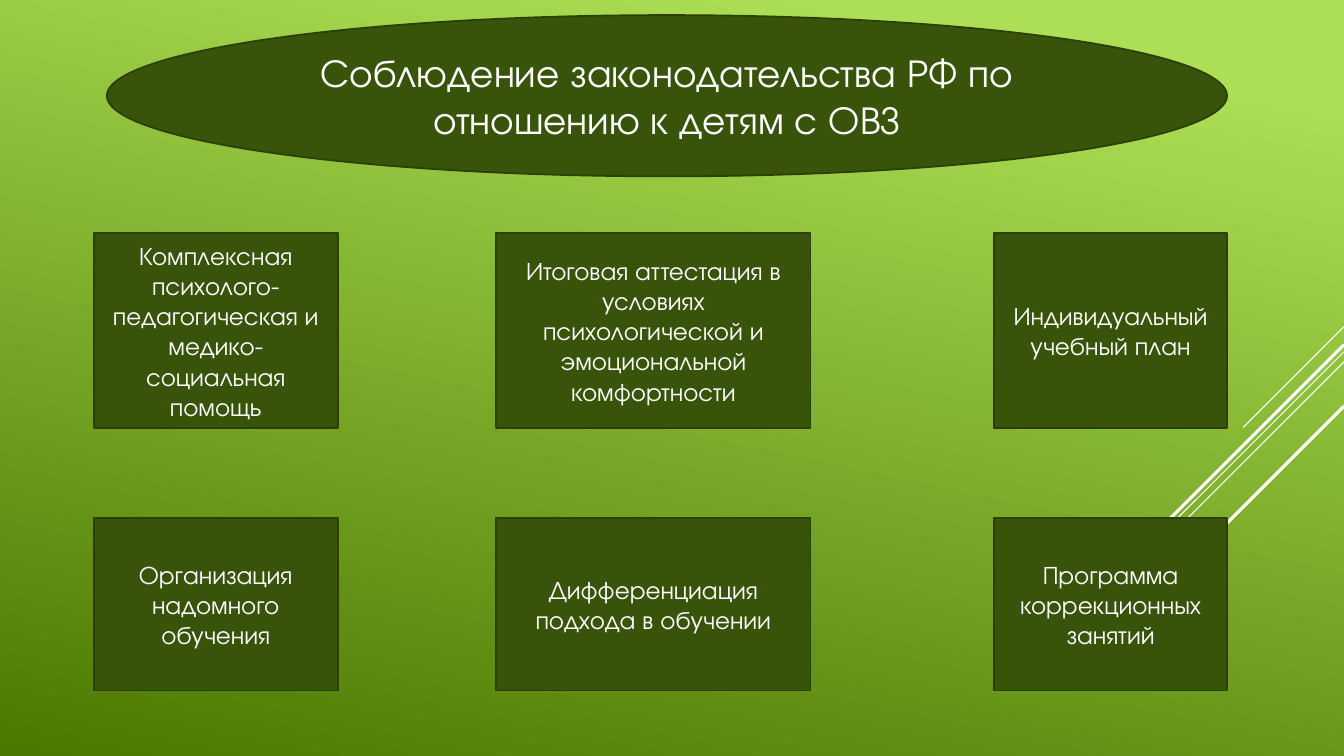
"""Build a slide on the rights of children with special needs under Russian law."""
from dataclasses import dataclass

import pptx
import pptx.dml.color
import pptx.enum.shapes
import pptx.enum.text
import pptx.oxml
import pptx.oxml.ns
import pptx.util

Inches = pptx.util.Inches
Pt = pptx.util.Pt
Shapes = pptx.enum.shapes.MSO_SHAPE

TITLE = "Соблюдение законодательства РФ по отношению к детям с ОВЗ"
MEASURES = [
    [
        "Комплексная психолого-педагогическая и медико-социальная помощь",
        "Итоговая аттестация в условиях психологической и эмоциональной комфортности",
        "Индивидуальный учебный план",
    ],
    [
        "Организация надомного обучения",
        "Дифференциация подхода в обучении",
        "Программа коррекционных занятий",
    ],
]
PAGE_WIDTH, PAGE_HEIGHT = 13.33, 7.5
TITLE_PLACE = (1.06, 0.15, 11.11, 1.6)
COLUMNS = [(0.93, 2.42), (4.92, 3.12), (9.86, 2.31)]
ROWS = [(2.31, 1.94), (5.14, 1.71)]
DIAGONALS = [
    (3.24, 1.0, 0.75),
    (3.49, 3.26, 0.75),
    (3.59, 2.07, 0.75),
    (3.42, 1.91, 2.25),
    (4.03, 1.39, 2.25),
]


@dataclass(frozen=True)
class Theme:
    """Colours, font and sizes of the slide."""
    light: str = "ACDF55"
    dark: str = "4C7800"
    box: str = "38540A"
    edge: str = "2E3E07"
    white: str = "FFFFFF"
    font: str = "TeX Gyre Adventor"
    title_size: int = 28
    body_size: int = 18
    edge_width: float = 1.25
    light_stop: float = 0.1
    gradient_angle: int = 258


THEME = Theme()


def colour(code):
    """Return the colour for a hexadecimal code."""
    return pptx.dml.color.RGBColor.from_string(code)


def paint_background(page):
    """Fill the page with the green gradient."""
    fill = page.background.fill
    fill.gradient()
    fill.gradient_angle = THEME.gradient_angle
    stops = [(THEME.light_stop, THEME.light), (1.0, THEME.dark)]
    for stop, (position, code) in zip(fill.gradient_stops, stops):
        stop.position = position
        stop.color.rgb = colour(code)


def add_diagonal(page, top, span, width):
    """Draw a 45-degree line down from the right edge."""
    line = page.shapes.add_connector(
        pptx.enum.shapes.MSO_CONNECTOR.STRAIGHT,
        Inches(PAGE_WIDTH), Inches(top),
        Inches(PAGE_WIDTH - span), Inches(top + span),
    )
    line.line.color.rgb = colour(THEME.white)
    line.line.width = Pt(width)
    line._element.spPr.append(pptx.oxml.parse_xml(
        f"<a:effectLst {pptx.oxml.ns.nsdecls('a')}/>"))


def add_box(page, kind, place, text, size):
    """Add a dark green shape with centred white text."""
    box = page.shapes.add_shape(kind, *map(Inches, place))
    box.shadow.inherit = False
    box.fill.solid()
    box.fill.fore_color.rgb = colour(THEME.box)
    box.line.color.rgb = colour(THEME.edge)
    box.line.width = Pt(THEME.edge_width)
    frame = box.text_frame
    frame.word_wrap = True
    frame.vertical_anchor = pptx.enum.text.MSO_ANCHOR.MIDDLE
    para = frame.paragraphs[0]
    para.text = text
    para.alignment = pptx.enum.text.PP_ALIGN.CENTER
    para.font.name = THEME.font
    para.font.size = Pt(size)
    para.font.color.rgb = colour(THEME.white)


def main():
    """Build and save the deck."""
    deck = pptx.Presentation()
    deck.slide_width = Inches(PAGE_WIDTH)
    deck.slide_height = Inches(PAGE_HEIGHT)
    page = deck.slides.add_slide(deck.slide_layouts.get_by_name("Blank"))
    paint_background(page)
    for diagonal in DIAGONALS:
        add_diagonal(page, *diagonal)
    add_box(page, Shapes.OVAL, TITLE_PLACE, TITLE, THEME.title_size)
    for (top, height), texts in zip(ROWS, MEASURES):
        for (left, width), text in zip(COLUMNS, texts):
            place = (left, top, width, height)
            add_box(page, Shapes.RECTANGLE, place, text, THEME.body_size)
    deck.save("out.pptx")


if __name__ == "__main__":
    main()
